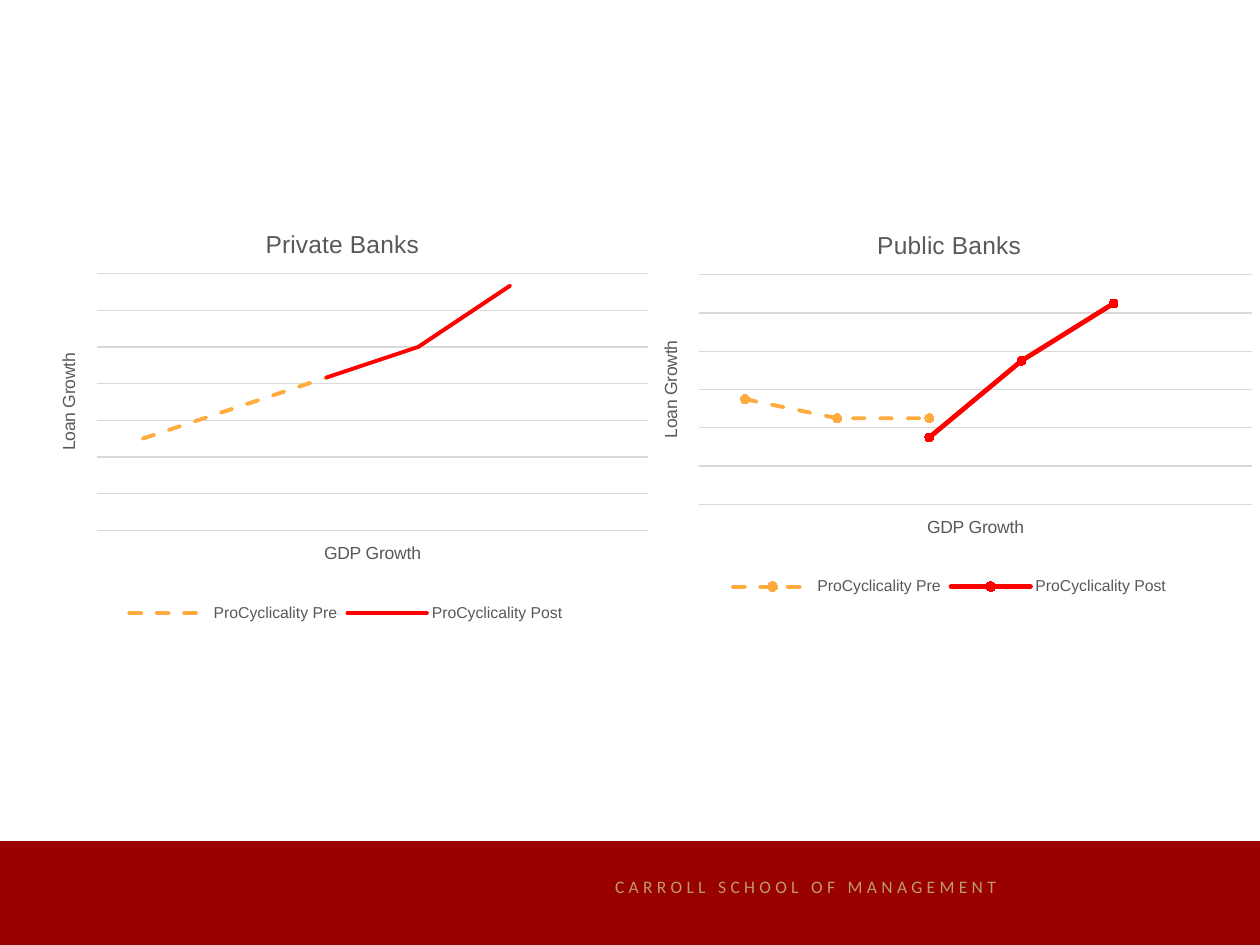
from lxml.etree import SubElement
from pptx import Presentation
from pptx.chart.data import CategoryChartData
from pptx.dml.color import RGBColor
from pptx.enum.chart import XL_CHART_TYPE, XL_LEGEND_POSITION, XL_MARKER_STYLE
from pptx.enum.dml import MSO_LINE
from pptx.enum.shapes import MSO_SHAPE
from pptx.enum.text import MSO_AUTO_SIZE
from pptx.oxml.ns import qn
from pptx.util import Pt

MAROON = RGBColor(0x99, 0x00, 0x00)
GOLD = RGBColor(0xBC, 0x9B, 0x6A)
ORANGE = RGBColor(0xFF, 0xAB, 0x40)
RED = RGBColor(0xFF, 0x00, 0x00)
GRAY = RGBColor(0x59, 0x59, 0x59)
GRID = RGBColor(0xD9, 0xD9, 0xD9)
BLACK = RGBColor(0x00, 0x00, 0x00)


class SlideBuilder:
    chart_font = "Arial"
    footer_font = "Calibri"

    def __init__(self, page):
        self.page = page

    def band(self, left, top, width, height):
        shape = self.page.shapes.add_shape(
            MSO_SHAPE.RECTANGLE, Pt(left), Pt(top), Pt(width), Pt(height))
        shape.shadow.inherit = False
        shape.fill.solid()
        shape.fill.fore_color.rgb = MAROON
        shape.line.fill.background()

    def footer(self, text, left, top, width, height):
        box = self.page.shapes.add_textbox(Pt(left), Pt(top), Pt(width), Pt(height))
        frame = box.text_frame
        frame.text = text
        frame.word_wrap = False
        frame.auto_size = MSO_AUTO_SIZE.SHAPE_TO_FIT_TEXT
        span = frame.paragraphs[0].runs[0]
        self.style(span.font, 10, GOLD, self.footer_font)
        span._r.get_or_add_rPr().set("spc", "250")

    def style(self, font, size, color, name=None):
        font.name = name or self.chart_font
        font.size = Pt(size)
        font.bold = False
        font.color.rgb = color

    def title(self, owner, text, size):
        owner.has_title = True
        title = owner.chart_title if hasattr(owner, "chart_title") else owner.axis_title
        title.text_frame.text = text
        self.style(title.text_frame.paragraphs[0].runs[0].font, size, GRAY)
        return title

    def layout(self, parent, position, frame, inner=False):
        old = parent.find(qn("c:layout"))
        if old is None:
            old = SubElement(parent, qn("c:layout"))
            parent.insert(0, old)
        manual = SubElement(old, qn("c:manualLayout"))
        left, top, width, height = frame
        x, y, *size = position
        fractions = {"x": (x - left) / width, "y": (y - top) / height}
        if inner:
            SubElement(manual, qn("c:layoutTarget")).set("val", "inner")
            fractions.update(w=size[0] / width, h=size[1] / height)
        for key in ("x", "y"):
            SubElement(manual, qn(f"c:{key}Mode")).set("val", "edge")
        for key, value in fractions.items():
            SubElement(manual, qn(f"c:{key}")).set("val", f"{value:.4f}")

    def line_chart(self, title, frame, title_at, plot, scale, pre, post, widths, markers):
        data = CategoryChartData()
        data.categories = ["1", "2", "3", "4", "5", "6"]
        data.add_series("ProCyclicality Pre", pre + [None] * 3)
        data.add_series("ProCyclicality Post", [None] * 2 + post + [None])
        kind = XL_CHART_TYPE.LINE_MARKERS if markers else XL_CHART_TYPE.LINE
        chart = self.page.shapes.add_chart(kind, *map(Pt, frame), data).chart
        self.style(chart.font, 10, BLACK)

        heading = self.title(chart, title, 14)
        self.layout(heading._element, title_at, frame)
        self.layout(chart._chartSpace.chart.plotArea, plot, frame, inner=True)

        values = chart.value_axis
        values.minimum_scale, values.maximum_scale, values.major_unit = scale
        values.has_major_gridlines = True
        values.major_gridlines.format.line.color.rgb = GRID
        values.major_gridlines.format.line.width = Pt(0.75)
        for axis, name in ((values, "Loan Growth"), (chart.category_axis, "GDP Growth")):
            self.title(axis, name, 10)
            axis.visible = False

        chart.has_legend = True
        chart.legend.position = XL_LEGEND_POSITION.BOTTOM
        chart.legend.include_in_layout = False
        self.style(chart.legend.font, 9, GRAY)

        chart.plots[0].vary_by_categories = False
        for series, color, width in zip(chart.plots[0].series, (ORANGE, RED), widths):
            series.smooth = False
            series.format.line.color.rgb = color
            series.format.line.width = Pt(width)
            series._element.find(qn("c:spPr")).find(qn("a:ln")).set("cap", "rnd")
            marker = series.marker
            if markers:
                marker.style = XL_MARKER_STYLE.CIRCLE
                marker.size = 5
                marker.format.fill.solid()
                marker.format.fill.fore_color.rgb = color
                marker.format.line.color.rgb = color
            else:
                marker.style = XL_MARKER_STYLE.NONE
        chart.plots[0].series[0].format.line.dash_style = MSO_LINE.DASH


def main():
    deck = Presentation()
    deck.slide_width, deck.slide_height = Pt(720), Pt(540)
    builder = SlideBuilder(deck.slides.add_slide(deck.slide_layouts[6]))
    builder.band(0, 480.7, 720, 60.5)
    builder.footer("CARROLL SCHOOL OF MANAGEMENT", 344.4, 497.1, 254.2, 19.4)
    builder.line_chart(
        "Public Banks", (362.2, 120.2, 360.7, 223.2), (498.7, 128.5),
        (399.4, 157, 316, 131.3), (89.5, 101.5, 2),
        [95, 94, 94], [93, 97, 100], (2.25, 2.75), True)
    builder.line_chart(
        "Private Banks", (18, 120.2, 359.3, 238.3), (149.2, 128),
        (55.4, 156.3, 314.9, 146.9), (92, 100.4, 1.2),
        [95, 96, 97], [97, 98, 100], (2.25, 2.25), False)
    deck.save("out.pptx")


if __name__ == "__main__":
    main()
